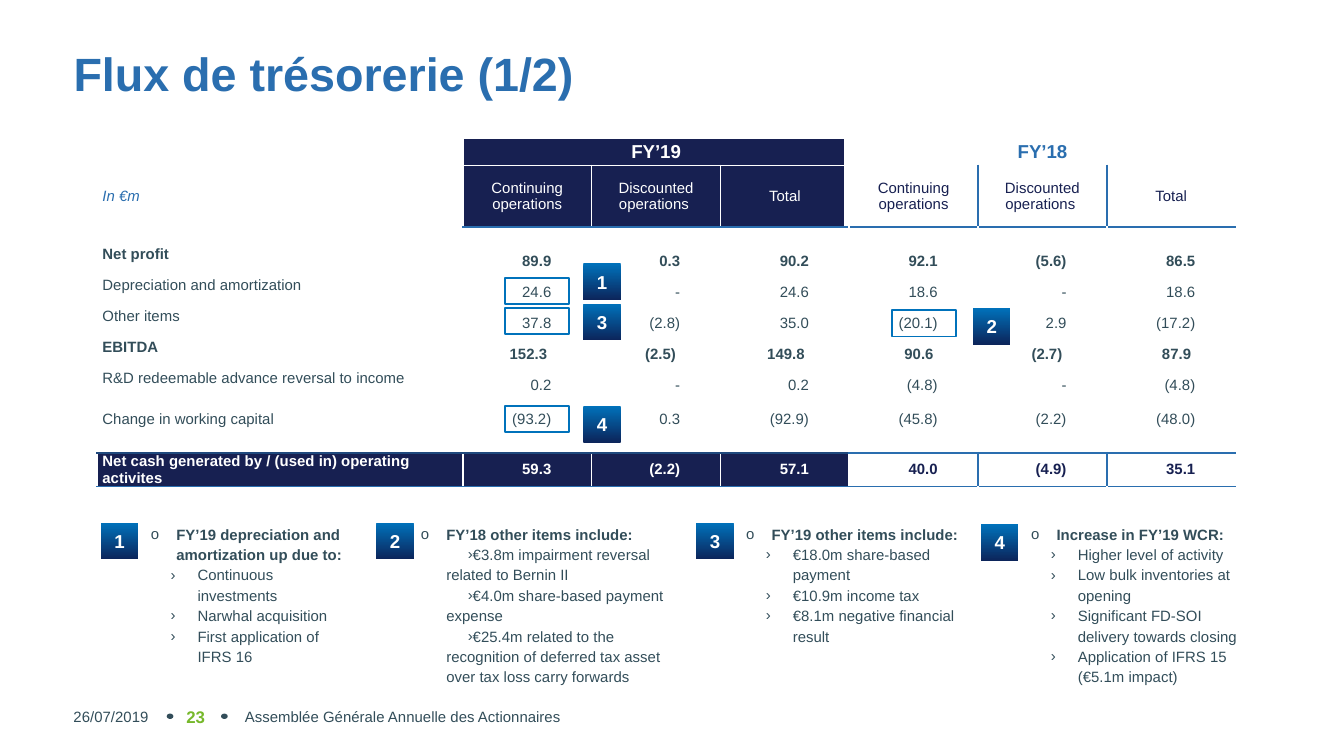
import pptx
import pptx.util
import pptx.dml.color
import pptx.enum.shapes
import pptx.enum.text
import pptx.oxml.ns
import lxml.etree
from dataclasses import dataclass

Pt = pptx.util.Pt
Align = pptx.enum.text.PP_ALIGN
Anchor = pptx.enum.text.MSO_ANCHOR
Shape = pptx.enum.shapes.MSO_SHAPE
qn = pptx.oxml.ns.qn

COLORS = {
    "white": "FFFFFF", "navy": "172051", "blue": "2A6EAF", "ink": "324D59",
    "rule": "1F497D", "bright": "0072BB", "deep": "0C255B", "green": "76B82A",
}


@dataclass
class Badge:
    number: str
    left: float
    top: float


@dataclass
class Note:
    badge: Badge
    left: float
    width: float
    heading: str
    points: list[str]
    margin: float = 28
    indent: float = -14.4


@dataclass
class Line:
    label: str
    values: list[str]
    bold: bool = False
    label_anchor: Anchor = Anchor.TOP


TABLE_BADGES = [Badge("3", 312.5, 162.7), Badge("1", 312.5, 141.1),
                Badge("2", 521.3, 164.9), Badge("4", 312.5, 217.4)]
HIGHLIGHTS = [(478, 166.3), (270.7, 217.4), (270.7, 165), (270.7, 149)]

NOTES = [
    Note(Badge("1", 54, 280), 70.6, 121, "FY’19 depreciation and amortization up due to:",
         ["Continuous investments", "Narwhal acquisition", "First application of IFRS 16"]),
    Note(Badge("2", 201.6, 280), 215.3, 159.8, "FY’18 other items include:",
         ["€3.8m impairment reversal related to Bernin II", "€4.0m share-based payment expense",
          "€25.4m related to the recognition of deferred tax asset over tax loss carry forwards"],
         margin=16.6, indent=11.5),
    Note(Badge("3", 373, 280), 389.5, 131.8, "FY’19 other items include:",
         ["€18.0m share-based payment", "€10.9m income tax", "€8.1m negative financial result"]),
    Note(Badge("4", 525.6, 280.8), 542.2, 128.2, "Increase in FY’19 WCR:",
         ["Higher level of activity", "Low bulk inventories at opening",
          "Significant FD-SOI delivery towards closing", "Application of IFRS 15 (€5.1m impact)"]),
]

HEADINGS = ["Continuing operations", "Discounted operations ", "Total"] * 2
ROW_HEIGHTS = [14.4, 33.1, 10] + [16.6] * 5 + [20.2, 7.8, 18, 16.6]
HEADING_ROW, FIRST_LINE_ROW, TOTAL_ROW = 1, 3, 10
LINES = [
    Line("Net profit", ["89.9", "0.3", "90.2", "92.1", "(5.6)", "86.5"], True),
    Line("Depreciation and amortization", ["24.6", "-", "24.6", "18.6", "-", "18.6"]),
    Line("Other items", ["37.8", "(2.8)", "35.0", "(20.1)", "2.9", "(17.2)"]),
    Line("EBITDA", ["152.3 ", "(2.5) ", "149.8 ", "90.6 ", "(2.7) ", "87.9 "], True),
    Line("R&D redeemable advance reversal to income",
         ["0.2", "-", "0.2", "(4.8)", "-", "(4.8)"]),
    Line("Change in working capital",
         ["(93.2)", "0.3", "(92.9)", "(45.8)", "(2.2)", "(48.0)"], label_anchor=Anchor.MIDDLE),
]
TOTAL = Line("Net cash generated by / (used in) operating activites",
             ["59.3", "(2.2)", "57.1", "40.0", "(4.9)", "35.1"], True, Anchor.BOTTOM)


def rgb(color: str) -> pptx.dml.color.RGBColor:
    return pptx.dml.color.RGBColor.from_string(COLORS[color])


def write(paragraph, text: str, *, size: float = 8, color: str = "ink", bold: bool = False,
          italic: bool = False, align: Align = Align.LEFT) -> None:
    paragraph.alignment = align
    run = paragraph.add_run()
    run.text = text
    run.font.name = "Arial"
    run.font.size = Pt(size)
    run.font.bold = bold
    run.font.italic = italic
    run.font.color.rgb = rgb(color)


def set_frame(frame, anchor: Anchor, left: float = 0, top: float = 0) -> None:
    frame.word_wrap = True
    frame.auto_size = pptx.enum.text.MSO_AUTO_SIZE.NONE
    frame.vertical_anchor = anchor
    frame.margin_left = frame.margin_right = Pt(left)
    frame.margin_top = frame.margin_bottom = Pt(top)


def place(shape, left: float, top: float, width: float, height: float) -> None:
    shape.left, shape.top, shape.width, shape.height = map(Pt, (left, top, width, height))


def add_plain_shape(slide, kind: Shape, left: float, top: float, width: float, height: float):
    shape = slide.shapes.add_shape(kind, Pt(left), Pt(top), Pt(width), Pt(height))
    shape.shadow.inherit = False
    shape.line.fill.background()
    return shape


def add_badge(slide, badge: Badge) -> None:
    square = add_plain_shape(slide, Shape.RECTANGLE, badge.left, badge.top, 20, 19.6)
    square.fill.gradient()
    square.fill.gradient_angle = 270
    for stop, color in zip(square.fill.gradient_stops, ("bright", "deep")):
        stop.color.rgb = rgb(color)
    set_frame(square.text_frame, Anchor.MIDDLE)
    write(square.text_frame.paragraphs[0], badge.number, size=10, color="white", bold=True,
          align=Align.CENTER)


def add_highlight(slide, left: float, top: float) -> None:
    outline = add_plain_shape(slide, Shape.RECTANGLE, left, top, 34, 14)
    outline.fill.background()
    outline.line.color.rgb = rgb("bright")
    outline.line.width = Pt(1)


def add_footer_text(slide, text: str, left: float, width: float, **style) -> None:
    box = slide.shapes.add_textbox(Pt(left), Pt(373), Pt(width), Pt(21.6))
    set_frame(box.text_frame, Anchor.MIDDLE)
    write(box.text_frame.paragraphs[0], text, **style)


def set_bullet(paragraph, symbol: str, margin: float, indent: float) -> None:
    properties = paragraph._p.get_or_add_pPr()
    properties.set("marL", str(Pt(margin)))
    properties.set("indent", str(Pt(indent)))
    bullet_color = lxml.etree.SubElement(properties, qn("a:buClr"))
    lxml.etree.SubElement(bullet_color, qn("a:srgbClr"), val=COLORS["ink"])
    lxml.etree.SubElement(properties, qn("a:buFont"), typeface="Arial")
    lxml.etree.SubElement(properties, qn("a:buChar"), char=symbol)


def fill_note(body, note: Note) -> None:
    place(body, note.left, 276.5, note.width, 90.7)
    frame = body.text_frame
    set_frame(frame, Anchor.TOP, 7.2, 3.6)
    for index, text in enumerate([note.heading, *note.points]):
        paragraph = frame.add_paragraph() if index else frame.paragraphs[0]
        if index:
            set_bullet(paragraph, "›", note.margin, note.indent)
        else:
            set_bullet(paragraph, "o", 16.6, -13.6)
        paragraph.line_spacing = 1.14
        paragraph.space_before = Pt(0)
        write(paragraph, text, bold=index == 0)


def cell_borders(row: int, column: int) -> dict[str, tuple[str, float]]:
    borders = {side: ("white", 1) for side in ("L", "R", "T", "B")}
    total_rule = "rule" if column < 4 else "blue"
    if row <= HEADING_ROW and column in (3, 4):
        borders["R" if column == 3 else "L"] = ("white", 6)
    if row in (HEADING_ROW, TOTAL_ROW):
        if column in (4, 5):
            borders["R"] = ("blue", 1)
        if column in (5, 6):
            borders["L"] = ("blue", 1)
        if column or row == TOTAL_ROW:
            borders["B"] = ("blue", 1)
    if row == TOTAL_ROW:
        borders["T"] = (total_rule, 1)
    if row == TOTAL_ROW - 1:
        borders["B"] = (total_rule, 1)
    if row == TOTAL_ROW + 1 or (row == HEADING_ROW + 1 and column):
        borders["T"] = ("blue", 1)
    return borders


def style_cell(cell, row: int, column: int) -> None:
    properties = cell._tc.get_or_add_tcPr()
    for side, (color, width) in cell_borders(row, column).items():
        border = lxml.etree.SubElement(properties, qn(f"a:ln{side}"), w=str(Pt(width)))
        solid = lxml.etree.SubElement(border, qn("a:solidFill"))
        lxml.etree.SubElement(solid, qn("a:srgbClr"), val=COLORS[color])
    dark = (row <= HEADING_ROW and 1 <= column <= 3) or (row == TOTAL_ROW and column <= 3)
    cell.fill.solid()
    cell.fill.fore_color.rgb = rgb("navy" if dark else "white")
    cell.vertical_anchor = Anchor.MIDDLE
    cell.margin_left = cell.margin_right = Pt(4.3 if column else 2.9)
    cell.margin_top = cell.margin_bottom = 0
    cell.text_frame.paragraphs[0]._p.get_or_add_endParaRPr().set("sz", "100")


def write_line(table, row: int, line: Line) -> None:
    for column, text in enumerate([line.label, *line.values]):
        cell = table.cell(row, column)
        color = "ink"
        if row == TOTAL_ROW:
            color = "white" if column < 4 else "navy"
        if column:
            cell.margin_right = Pt(21.6)
        else:
            cell.vertical_anchor = line.label_anchor
        write(cell.text_frame.paragraphs[0], text, color=color, bold=line.bold,
              align=Align.RIGHT if column else Align.LEFT)


def add_cash_flow_table(slide) -> None:
    table = slide.shapes.add_table(len(ROW_HEIGHTS), 7, Pt(52), Pt(74.2), Pt(610),
                                   Pt(sum(ROW_HEIGHTS))).table
    table.first_row = table.horz_banding = False
    for column, width in zip(table.columns, [196] + [69] * 6):
        column.width = Pt(width)
    for row, height in enumerate(ROW_HEIGHTS):
        table.rows[row].height = Pt(height)
        for column in range(7):
            style_cell(table.cell(row, column), row, column)
    for column, year, color in ((1, "FY’19", "white"), (4, "FY’18", "blue")):
        table.cell(0, column).merge(table.cell(0, column + 2))
        write(table.cell(0, column).text_frame.paragraphs[0], year, size=10, color=color,
              bold=True, align=Align.CENTER)
    write(table.cell(HEADING_ROW, 0).text_frame.paragraphs[0], "In €m", color="blue", italic=True)
    for column, heading in enumerate(HEADINGS, 1):
        write(table.cell(HEADING_ROW, column).text_frame.paragraphs[0], heading,
              color="white" if column < 4 else "navy", align=Align.CENTER)
    for row, line in enumerate(LINES, FIRST_LINE_ROW):
        write_line(table, row, line)
    write_line(table, TOTAL_ROW, TOTAL)


def main() -> None:
    deck = pptx.Presentation()
    deck.slide_width, deck.slide_height = Pt(720), Pt(405)
    slide = deck.slides.add_slide(deck.slide_layouts.get_by_name("Comparison"))
    title, *bodies = slide.placeholders
    place(title, 39.4, 23.8, 680.6, 30.2)
    set_frame(title.text_frame, Anchor.MIDDLE)
    write(title.text_frame.paragraphs[0], "Flux de trésorerie (1/2)", size=25, color="blue",
          bold=True)
    for left in (89.3, 118.4):
        dot = add_plain_shape(slide, Shape.OVAL, left, 382.3, 3.6, 2.9)
        dot.fill.solid()
        dot.fill.fore_color.rgb = rgb("ink")
    add_footer_text(slide, "26/07/2019", 39.4, 52.6)
    add_footer_text(slide, "23", 91.8, 26, size=9, color="green", bold=True, align=Align.CENTER)
    add_footer_text(slide, "Assemblée Générale Annuelle des Actionnaires", 131.2, 474)
    add_cash_flow_table(slide)
    for left, top in HIGHLIGHTS:
        add_highlight(slide, left, top)
    for badge in TABLE_BADGES + [note.badge for note in NOTES]:
        add_badge(slide, badge)
    for body, note in zip(bodies, NOTES):
        fill_note(body, note)
    deck.save("out.pptx")


if __name__ == "__main__":
    main()
